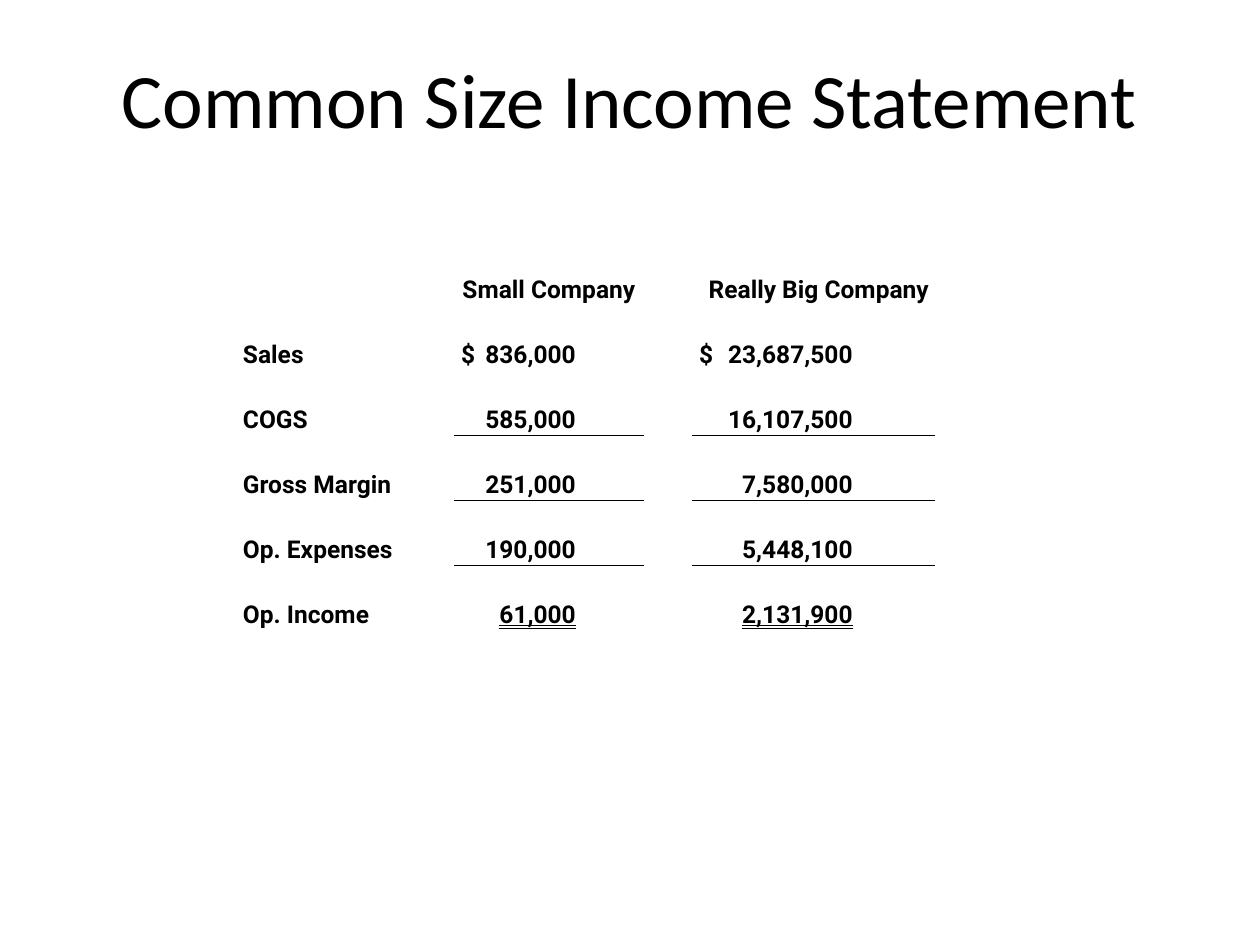
from lxml.etree import SubElement
from pptx import Presentation
from pptx.dml.color import RGBColor
from pptx.enum.text import MSO_ANCHOR, MSO_UNDERLINE, PP_ALIGN
from pptx.oxml.ns import qn
from pptx.util import Pt

# Content
TITLE = "Common Size Income Statement"
HEADERS = ["", "Small Company", "", "Really Big Company"]
ROWS = [
    ("Sales", " $\t836,000", "", " $\t23,687,500"),
    ("COGS", "\t585,000", "", "\t16,107,500"),
    ("Gross Margin", "\t251,000", "", "\t7,580,000"),
    ("Op. Expenses", "\t190,000", "", "\t5,448,100"),
    ("Op. Income", "\t61,000", "", "\t2,131,900"),
]
RULED_BELOW = {"COGS", "Op. Expenses"}
TOTAL = "Op. Income"

# Layout in px
COLUMN_WIDTHS = [212, 190, 48, 243]
HEADER_HEIGHT, ROW_HEIGHT = 95, 65
NUMBER_EDGES = {1: 121, 3: 160}  # right edge of the figures within each column
HEADER_SHIFT = {3: 11}
COLORS = {"text": "000000", "rule": "000000"}
PLAIN_STYLE = "{2D5ABB26-0587-4C30-8999-92F81FD0307C}"


def px(length):
    return round(length * 914400 / 126)


def add_right_tab(paragraph, position):
    tabs = SubElement(paragraph._p.get_or_add_pPr(), qn("a:tabLst"))
    SubElement(tabs, qn("a:tab"), pos=str(px(position)), algn="r")


def add_rule(cell, side):
    properties = cell._tc.get_or_add_tcPr()
    line = SubElement(properties, qn(f"a:{side}"), w=str(Pt(0.5)))
    fill = SubElement(line, qn("a:solidFill"))
    SubElement(fill, qn("a:srgbClr"), val=COLORS["rule"])


def format_font(font, name, size, bold):
    font.name, font.size, font.bold = name, Pt(size), bold
    font.color.rgb = RGBColor.from_string(COLORS["text"])


presentation = Presentation()
presentation.slide_width, presentation.slide_height = px(1260), px(945)
slide = presentation.slides.add_slide(presentation.slide_layouts[5])

# Title
title = slide.shapes.title
title.left, title.top, title.width, title.height = map(px, (63, 38, 1134, 120))
title.text_frame.text = TITLE
title.text_frame.vertical_anchor = MSO_ANCHOR.MIDDLE
title_paragraph = title.text_frame.paragraphs[0]
title_paragraph.alignment = PP_ALIGN.CENTER
format_font(title_paragraph.runs[0].font, "Calibri", 44, False)

# Income statement table
table_rows = [HEADERS, *ROWS]
heights = [HEADER_HEIGHT] + [ROW_HEIGHT] * len(ROWS)
frame = slide.shapes.add_table(
    len(table_rows), len(HEADERS),
    px(242), px(210), px(sum(COLUMN_WIDTHS)), px(sum(heights)))
table = frame.table
table.first_row = table.horz_banding = False
table._tbl.tblPr.find(qn("a:tableStyleId")).text = PLAIN_STYLE
for column, width in zip(table.columns, COLUMN_WIDTHS):
    column.width = px(width)
for row, height in zip(table.rows, heights):
    row.height = px(height)

for row_index, values in enumerate(table_rows):
    label = values[0]
    above = table_rows[row_index - 1][0] if row_index else ""
    for column_index, value in enumerate(values):
        cell = table.cell(row_index, column_index)
        cell.vertical_anchor = MSO_ANCHOR.BOTTOM
        cell.margin_left = cell.margin_right = cell.margin_top = px(1)
        cell.margin_bottom = 0
        if column_index in NUMBER_EDGES:
            if above in RULED_BELOW:
                add_rule(cell, "lnT")
            if label in RULED_BELOW:
                add_rule(cell, "lnB")
        cell.fill.background()
        if not value:
            continue

        cell.text_frame.text = value
        paragraph = cell.text_frame.paragraphs[0]
        font = paragraph.runs[0].font
        format_font(font, "Roboto", 14, True)
        if row_index == 0:
            paragraph.alignment = PP_ALIGN.CENTER
            cell.margin_left = px(1 + HEADER_SHIFT.get(column_index, 0))
        elif column_index in NUMBER_EDGES:
            add_right_tab(paragraph, NUMBER_EDGES[column_index])
            if label == TOTAL:
                font.underline = MSO_UNDERLINE.DOUBLE_LINE

presentation.save("out.pptx")
